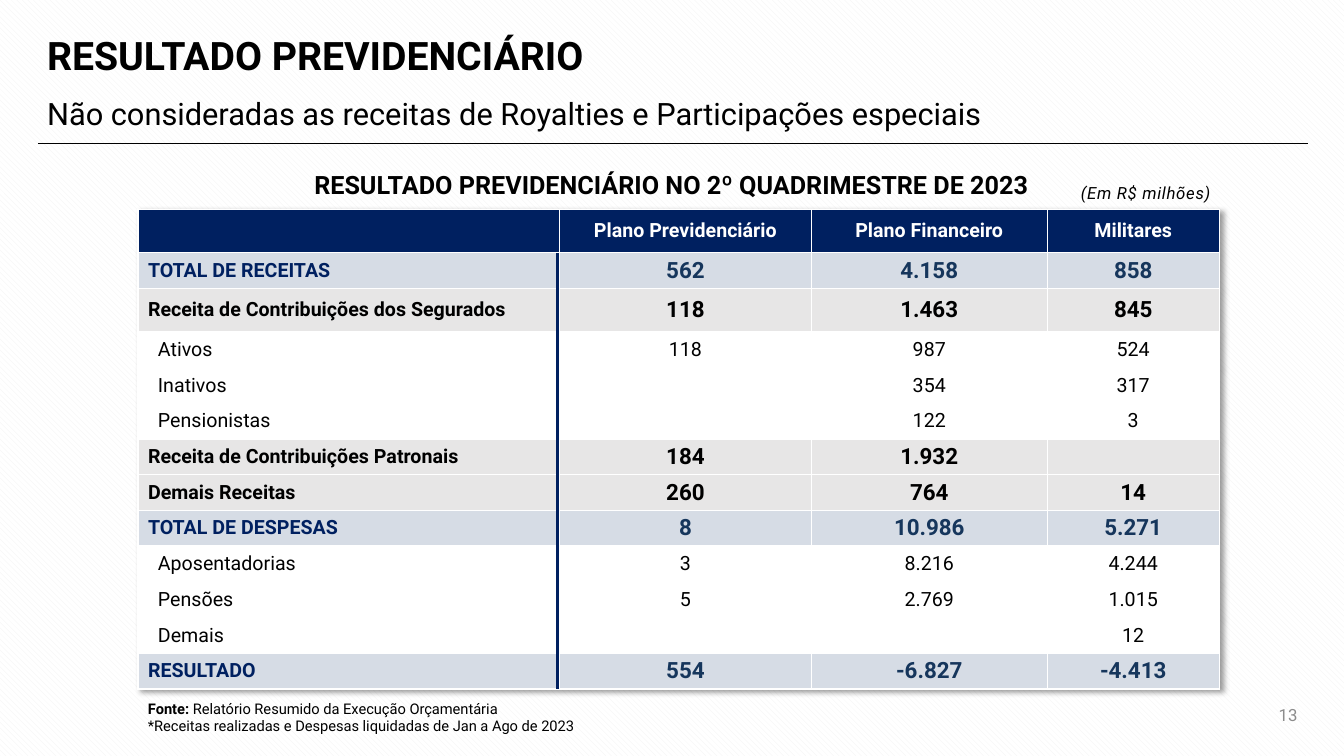
"""Build the slide with the pension result table for the second four months of 2023."""
from lxml.etree import SubElement
from pptx import Presentation
from pptx.dml.color import RGBColor
from pptx.enum.dml import MSO_PATTERN
from pptx.enum.shapes import MSO_CONNECTOR
from pptx.enum.text import MSO_ANCHOR, PP_ALIGN
from pptx.oxml import parse_xml
from pptx.oxml.ns import qn
from pptx.util import Cm, Pt

THEME = {
    "font": "Roboto",
    "black": RGBColor(0x00, 0x00, 0x00),
    "white": RGBColor(0xFF, 0xFF, 0xFF),
    "navy": RGBColor(0x00, 0x20, 0x60),
    "blue": RGBColor(0x16, 0x36, 0x5C),
    "pale": RGBColor(0xD6, 0xDC, 0xE5),
    "grey": RGBColor(0xE7, 0xE6, 0xE6),
    "stripe": RGBColor(0xF2, 0xF2, 0xF2),
    "number": RGBColor(0x8C, 0x8C, 0x8C),
    "title": Pt(28), "subtitle": Pt(22), "caption": Pt(18), "total": Pt(16),
    "body": Pt(14), "small": Pt(12), "source": Pt(10.5),
}


def add_run(p, text, size, color="black", **fmt):
    """Append a formatted run to a paragraph."""
    r = p.add_run()
    r.text = text
    for name, value in {"name": THEME["font"], "size": THEME[size], **fmt}.items():
        setattr(r.font, name, value)
    r.font.color.rgb = THEME[color]
    return r


def add_line(s, x1, y1, x2, y2, color, width):
    """Draw a straight line without a shadow."""
    line = s.shapes.add_connector(MSO_CONNECTOR.STRAIGHT, Cm(x1), Cm(y1), Cm(x2), Cm(y2))
    line.line.color.rgb = THEME[color]
    line.line.width = Pt(width)
    SubElement(line._element.spPr, qn("a:effectLst"))


prs = Presentation()
prs.slide_width, prs.slide_height = Cm(33.87), Cm(19.05)
s = prs.slides.add_slide(prs.slide_layouts[6])
bg = s.background.fill
bg.patterned()
bg.pattern = MSO_PATTERN.WIDE_DOWNWARD_DIAGONAL
bg.fore_color.rgb = THEME["stripe"]
bg.back_color.rgb = THEME["white"]

LEFT, CENTER, RIGHT = PP_ALIGN.LEFT, PP_ALIGN.CENTER, PP_ALIGN.RIGHT
TOP, MIDDLE = MSO_ANCHOR.TOP, MSO_ANCHOR.MIDDLE
BOLD = {"bold": True}
texts = [
    ((30.51, 17.5, 2.44, 1.02), MIDDLE, RIGHT, 1,
     [[("13", "small", "number", {})]]),
    ((0.94, 0.46, 19.94, 2.01), MIDDLE, LEFT, 0.9,
     [[("RESULTADO PREVIDENCIÁRIO", "title", "black", BOLD)]]),
    ((0.94, 2.01, 32, 1.5), MIDDLE, LEFT, 1.2,
     [[("Não consideradas as receitas de Royalties e Participações especiais",
        "subtitle", "black", {})]]),
    ((2.29, 4.14, 29.26, 1.02), TOP, CENTER, 1,
     [[("RESULTADO PREVIDENCIÁRIO NO 2º QUADRIMESTRE DE 2023", "caption", "black", BOLD)]]),
    ((25.45, 4.39, 5.31, 1.07), TOP, RIGHT, 1.2,
     [[("(Em R$ milhões)", "small", "black", {"italic": True})]]),
    ((3.48, 17.5, 12.04, 1.14), TOP, LEFT, 1,
     [[("Fonte: ", "source", "black", BOLD),
       ("Relatório Resumido da Execução Orçamentária", "source", "black", {})],
      [("*Receitas realizadas e Despesas liquidadas de Jan a Ago de 2023",
        "source", "black", {})]]),
]
for box, anchor, align, spacing, paragraphs in texts:
    tf = s.shapes.add_textbox(*map(Cm, box)).text_frame
    tf.word_wrap = True
    tf.vertical_anchor = anchor
    for i, runs in enumerate(paragraphs):
        p = tf.add_paragraph() if i else tf.paragraphs[0]
        p.alignment = align
        p.line_spacing = spacing
        for text, size, color, fmt in runs:
            r = add_run(p, text, size, color, **fmt)
            if fmt.get("italic"):
                r.font._element.set("spc", "50")

add_line(s, 0.97, 3.61, 32.97, 3.61, "black", 0.5)

KINDS = {
    "header": {"fill": "navy", "label": "white", "value": "white", "size": "body", "bold": True},
    "total": {"fill": "pale", "label": "navy", "value": "blue", "size": "total", "bold": True},
    "group": {"fill": "grey", "label": "black", "value": "black", "size": "total", "bold": True},
    "item": {"fill": "white", "label": "black", "value": "black", "size": "body", "bold": False},
}
rows = [
    ("header", "", "Plano Previdenciário", "Plano Financeiro", "Militares"),
    ("total", "TOTAL DE RECEITAS", "562", "4.158", "858"),
    ("group", "Receita de Contribuições dos Segurados", "118", "1.463", "845"),
    ("item", "Ativos", "118", "987", "524"),
    ("item", "Inativos", "", "354", "317"),
    ("item", "Pensionistas", "", "122", "3"),
    ("group", "Receita de Contribuições Patronais", "184", "1.932", ""),
    ("group", "Demais Receitas", "260", "764", "14"),
    ("total", "TOTAL DE DESPESAS", "8", "10.986", "5.271"),
    ("item", "Aposentadorias", "3", "8.216", "4.244"),
    ("item", "Pensões", "5", "2.769", "1.015"),
    ("item", "Demais", "", "", "12"),
    ("total", "RESULTADO", "554", "-6.827", "-4.413"),
]
col_widths = [10.62, 6.35, 5.94, 4.34]
row_heights = [1.09 if i in (0, 2) else 0.9 for i in range(len(rows))]
x, y, w, h = 3.48, 5.28, sum(col_widths), sum(row_heights)
table = s.shapes.add_table(len(rows), len(col_widths), Cm(x), Cm(y), Cm(w), Cm(h)).table
table.horz_banding = False
table._tbl.tblPr.insert(0, parse_xml(
    '<a:effectLst xmlns:a="http://schemas.openxmlformats.org/drawingml/2006/main">'
    '<a:outerShdw blurRad="50800" dist="38100" dir="2700000" algn="tl" rotWithShape="0">'
    '<a:srgbClr val="000000"><a:alpha val="40000"/></a:srgbClr>'
    '</a:outerShdw></a:effectLst>'))
for column, width in zip(table.columns, col_widths):
    column.width = Cm(width)
for i, (kind, *values) in enumerate(rows):
    look = KINDS[kind]
    table.rows[i].height = Cm(row_heights[i])
    for j, text in enumerate(values):
        cell = table.cell(i, j)
        cell.fill.solid()
        cell.fill.fore_color.rgb = THEME[look["fill"]]
        cell.vertical_anchor = MIDDLE
        cell.margin_top = cell.margin_bottom = Cm(0.02)
        cell.margin_left = cell.margin_right = Cm(0.02)
        p = cell.text_frame.paragraphs[0]
        p.alignment = CENTER
        if j == 0:
            p.alignment = LEFT
            cell.margin_left = Cm(0.5 if kind == "item" else 0.25)
        if text:
            add_run(p, text, look["size"] if j else "body",
                    look["value" if j else "label"], bold=look["bold"])

add_line(s, 14.05, y + row_heights[0], 14.05, y + h, "navy", 1.5)

prs.save("out.pptx")
